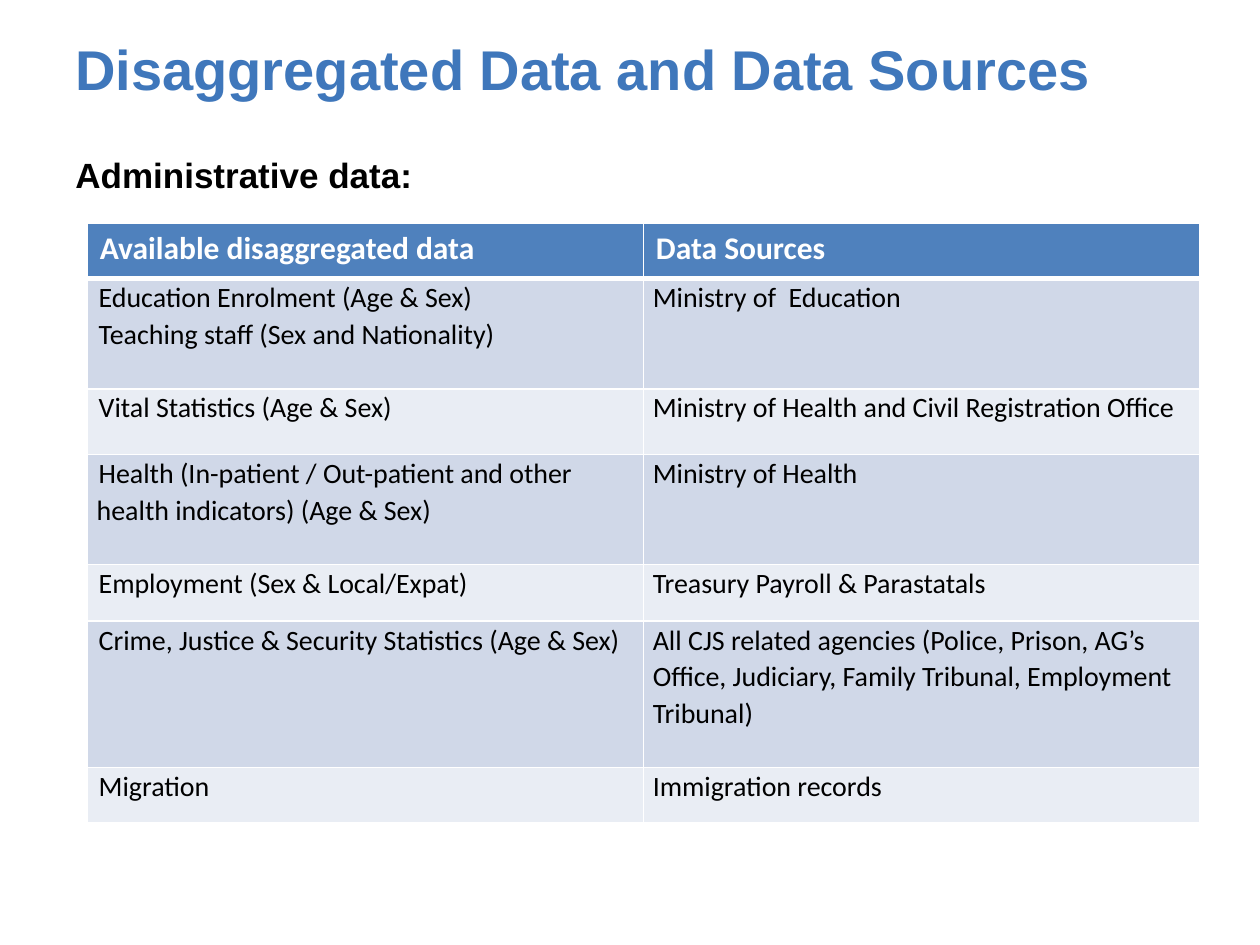
from dataclasses import dataclass

from lxml.etree import SubElement
from pptx import Presentation
from pptx.dml.color import RGBColor as Rgb
from pptx.enum.text import MSO_ANCHOR as Anchor
from pptx.oxml.ns import qn
from pptx.util import Cm, Pt


@dataclass(frozen=True)
class Theme:
    heading_font: str = "Arial"
    table_font: str = "Calibri"
    title_size: int = 32
    subtitle_size: int = 20
    header_size: int = 18
    body_size: int = 16
    title: str = "3F77BB"
    text: str = "000000"
    white: str = "FFFFFF"
    header_fill: str = "4F81BD"
    band_fills: tuple = ("D0D8E8", "E9EDF4")
    thin_line: int = 1
    thick_line: int = 3


THEME = Theme()

HEADER = ("Available disaggregated data", "Data Sources")

# Row height in cm, available data, data source
ROWS = [
    (2.22, "Education Enrolment (Age & Sex)\nTeaching staff (Sex and Nationality)",
     "Ministry of  Education"),
    (1.32, "Vital Statistics (Age & Sex)",
     "Ministry of Health and Civil Registration Office"),
    (2.22, "Health (In-patient / Out-patient and other health indicators) (Age & Sex)",
     "Ministry of Health"),
    (1.14, "Employment (Sex & Local/Expat)", "Treasury Payroll & Parastatals"),
    (2.95, "Crime, Justice & Security Statistics (Age & Sex)",
     "All CJS related agencies (Police, Prison, AG’s Office, Judiciary, "
     "Family Tribunal, Employment Tribunal)"),
    (1.12, "Migration", "Immigration records"),
]
HEADER_HEIGHT = 1.12
COLUMN_WIDTH = 11.21


def write_text(frame, text, *, font, size, color, bold=False, spacing=None, indent=0):
    """Fill a text frame, one paragraph for each line of text."""
    frame.word_wrap = True
    for number, line in enumerate(text.split("\n")):
        paragraph = frame.add_paragraph() if number else frame.paragraphs[0]
        if spacing:
            paragraph.line_spacing = spacing
        if indent:
            paragraph._p.get_or_add_pPr().set("indent", str(Cm(indent)))
        run = paragraph.add_run()
        run.text = line
        run.font.name = font
        run.font.size = Pt(size)
        run.font.bold = bold
        run.font.color.rgb = Rgb.from_string(color)


def add_heading(slide, text, top, height, *, size, color, anchor=Anchor.TOP):
    box = slide.shapes.add_textbox(Cm(1.27), Cm(top), Cm(22.86), Cm(height))
    box.text_frame.vertical_anchor = anchor
    write_text(box.text_frame, text, font=THEME.heading_font, size=size,
               color=color, bold=True)


def style_cell(cell, fill, *, top, bottom):
    """Draw the white cell borders, then the fill."""
    properties = cell._tc.get_or_add_tcPr()
    widths = {"L": THEME.thin_line, "R": THEME.thin_line, "T": top, "B": bottom}
    for side, width in widths.items():
        line = SubElement(properties, qn(f"a:ln{side}"), w=str(Pt(width)))
        line_fill = SubElement(line, qn("a:solidFill"))
        SubElement(line_fill, qn("a:srgbClr"), val=THEME.white)
    cell.fill.solid()
    cell.fill.fore_color.rgb = Rgb.from_string(fill)


def add_source_table(slide):
    heights = [HEADER_HEIGHT] + [height for height, *_ in ROWS]
    frame = slide.shapes.add_table(len(heights), len(HEADER), Cm(1.76), Cm(4.5),
                                   Cm(COLUMN_WIDTH * len(HEADER)), Cm(sum(heights)))
    table = frame.table
    for column in table.columns:
        column.width = Cm(COLUMN_WIDTH)
    for row, height in zip(table.rows, heights):
        row.height = Cm(height)

    # Header row
    for cell, text in zip(table.rows[0].cells, HEADER):
        style_cell(cell, THEME.header_fill, top=THEME.thin_line, bottom=THEME.thick_line)
        write_text(cell.text_frame, text, font=THEME.table_font,
                   size=THEME.header_size, color=THEME.white, bold=True)

    # Banded body rows
    for number, (_, *texts) in enumerate(ROWS):
        fill = THEME.band_fills[number % 2]
        top = THEME.thin_line if number else THEME.thick_line
        for column, text in enumerate(texts):
            cell = table.cell(number + 1, column)
            cell.margin_left = cell.margin_right = Cm(0.19)
            cell.margin_top = cell.margin_bottom = 0
            style_cell(cell, fill, top=top, bottom=THEME.thin_line)
            write_text(cell.text_frame, text, font=THEME.table_font,
                       size=THEME.body_size, color=THEME.text, spacing=1.07,
                       indent=0 if column else 0.04)


def main():
    presentation = Presentation()
    presentation.slide_width, presentation.slide_height = Cm(25.4), Cm(19.05)
    slide = presentation.slides.add_slide(presentation.slide_layouts[6])

    add_heading(slide, "Administrative data:", 2.97, 1.07,
                size=THEME.subtitle_size, color=THEME.text)
    add_source_table(slide)
    add_heading(slide, "Disaggregated Data and Data Sources", 0.61, 1.57,
                size=THEME.title_size, color=THEME.title, anchor=Anchor.BOTTOM)

    presentation.save("out.pptx")


if __name__ == "__main__":
    main()
